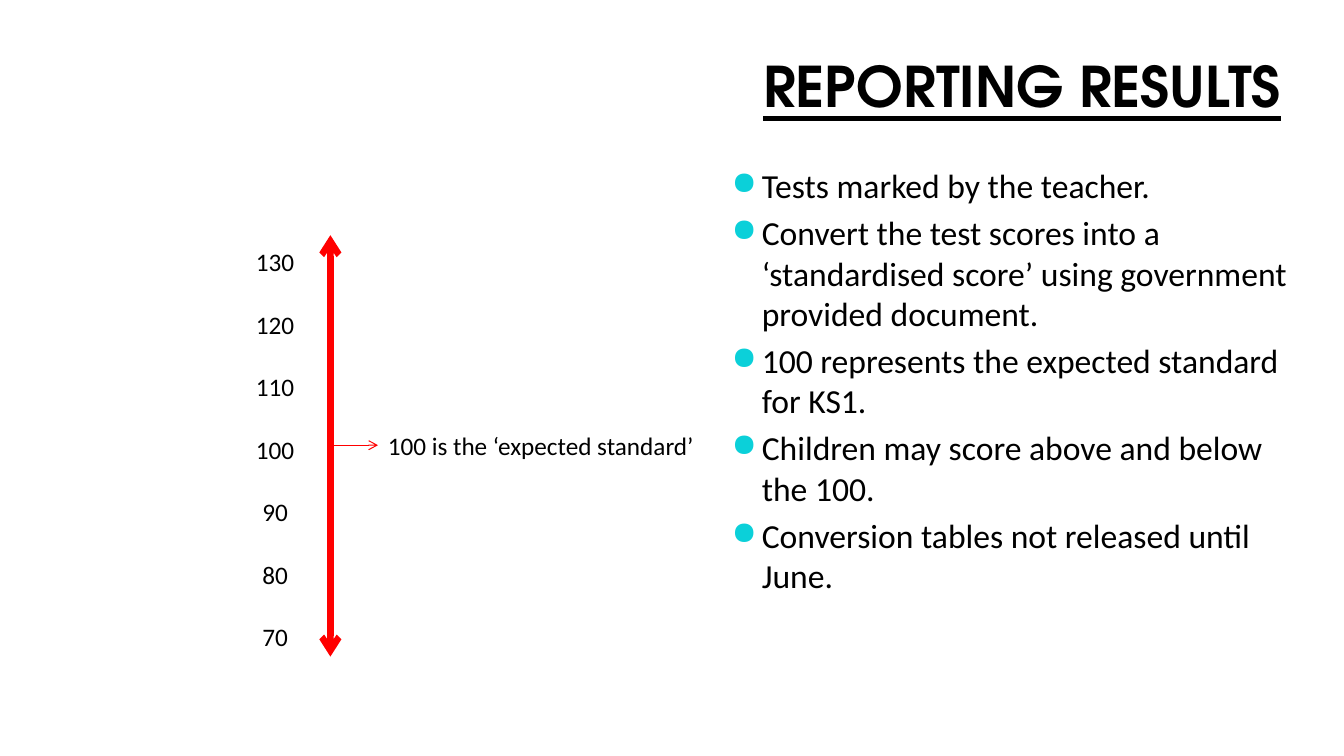
from dataclasses import dataclass

from lxml import etree
from pptx import Presentation
from pptx.dml.color import RGBColor
from pptx.enum import shapes, text
from pptx.oxml import ns
from pptx.util import Pt

COLOURS = {"ink": "000000", "paper": "FFFFFF", "scale": "FF0000", "bullet": "0BD0D9"}
BODY_FONT = "Calibri"
SCORES = range(130, 60, -10)
POINTS = [
    "Tests marked by the teacher.",
    "Convert the test scores into a ‘standardised score’ using government provided document.",
    "100 represents the expected standard for KS1.",
    "Children may score above and below the 100.",
    "Conversion tables not released until June.",
]


@dataclass
class Arrow:
    start: tuple[float, float]
    end: tuple[float, float]
    width: float
    ends: tuple[str, ...]


@dataclass
class TextBlock:
    box: tuple[float, float, float, float]
    lines: list[str]
    size: float
    font: str = BODY_FONT
    heading: bool = False
    bulleted: bool = False


ARROWS = [
    Arrow((236, 168), (236, 469), 4.5, ("headEnd", "tailEnd")),
    Arrow((236, 318), (270, 318), 0.75, ("tailEnd",)),
]
BLOCKS = [
    TextBlock((244, 13, 678, 101.5), ["REPORTING RESULTS"], 40, "TeX Gyre Adventor", heading=True),
    TextBlock((270, 304, 266, 29), ["100 is the ‘expected standard’"], 18),
    TextBlock((515.5, 114.5, 424, 345.5), POINTS, 24, bulleted=True),
]


def colour(name: str) -> RGBColor:
    return RGBColor.from_string(COLOURS[name])


def add_run(p, words: str, size: float, font: str = BODY_FONT, heading: bool = False) -> None:
    r = p.add_run()
    r.text = words
    r.font.size, r.font.name = Pt(size), font
    r.font.bold = r.font.underline = heading
    r.font.color.rgb = colour("ink")


def add_bullet(p) -> None:
    pPr = p._p.get_or_add_pPr()
    pPr.set("marL", str(Pt(21.6)))
    pPr.set("indent", str(-Pt(21.6)))
    bu_clr = etree.SubElement(pPr, ns.qn("a:buClr"))
    etree.SubElement(bu_clr, ns.qn("a:srgbClr"), val=COLOURS["bullet"])
    etree.SubElement(pPr, ns.qn("a:buSzPct"), val="95000")
    etree.SubElement(pPr, ns.qn("a:buChar"), char="●")


def add_text(slide, block: TextBlock) -> None:
    sp = slide.shapes.add_textbox(*map(Pt, block.box))
    tf = sp.text_frame
    tf.word_wrap = True
    if block.heading:
        tf.vertical_anchor = text.MSO_ANCHOR.MIDDLE
    for i, line in enumerate(block.lines):
        p = tf.add_paragraph() if i else tf.paragraphs[0]
        if block.bulleted:
            add_bullet(p)
        if block.heading:
            p.alignment = text.PP_ALIGN.RIGHT
            p.line_spacing = 0.9
        if i:
            p.space_before = Pt(block.size * 0.2)
        add_run(p, line, block.size, block.font, block.heading)


def add_arrow(slide, arrow: Arrow) -> None:
    line = slide.shapes.add_connector(
        shapes.MSO_CONNECTOR.STRAIGHT, *map(Pt, arrow.start + arrow.end))
    line.line.color.rgb = colour("scale")
    line.line.width = Pt(arrow.width)
    for end in arrow.ends:
        etree.SubElement(line.line._get_or_add_ln(), ns.qn(f"a:{end}"), type="arrow")
    etree.SubElement(line._element.spPr, ns.qn("a:effectLst"))


def add_score_table(slide) -> None:
    frame = slide.shapes.add_table(
        len(SCORES), 1, Pt(173.5), Pt(173.5), Pt(46), Pt(44.6 * len(SCORES)))
    table = frame.table
    table.first_row = table.horz_banding = False
    for cell, score in zip(table.iter_cells(), SCORES):
        cell.fill.solid()
        cell.fill.fore_color.rgb = colour("paper")
        p = cell.text_frame.paragraphs[0]
        p.alignment = text.PP_ALIGN.CENTER
        add_run(p, str(score), 18)


def main() -> None:
    prs = Presentation()
    prs.slide_width, prs.slide_height = Pt(960), Pt(540)
    slide = prs.slides.add_slide(prs.slide_layouts[6])
    add_score_table(slide)
    for arrow in ARROWS:
        add_arrow(slide, arrow)
    for block in BLOCKS:
        add_text(slide, block)
    prs.save("out.pptx")


if __name__ == "__main__":
    main()
